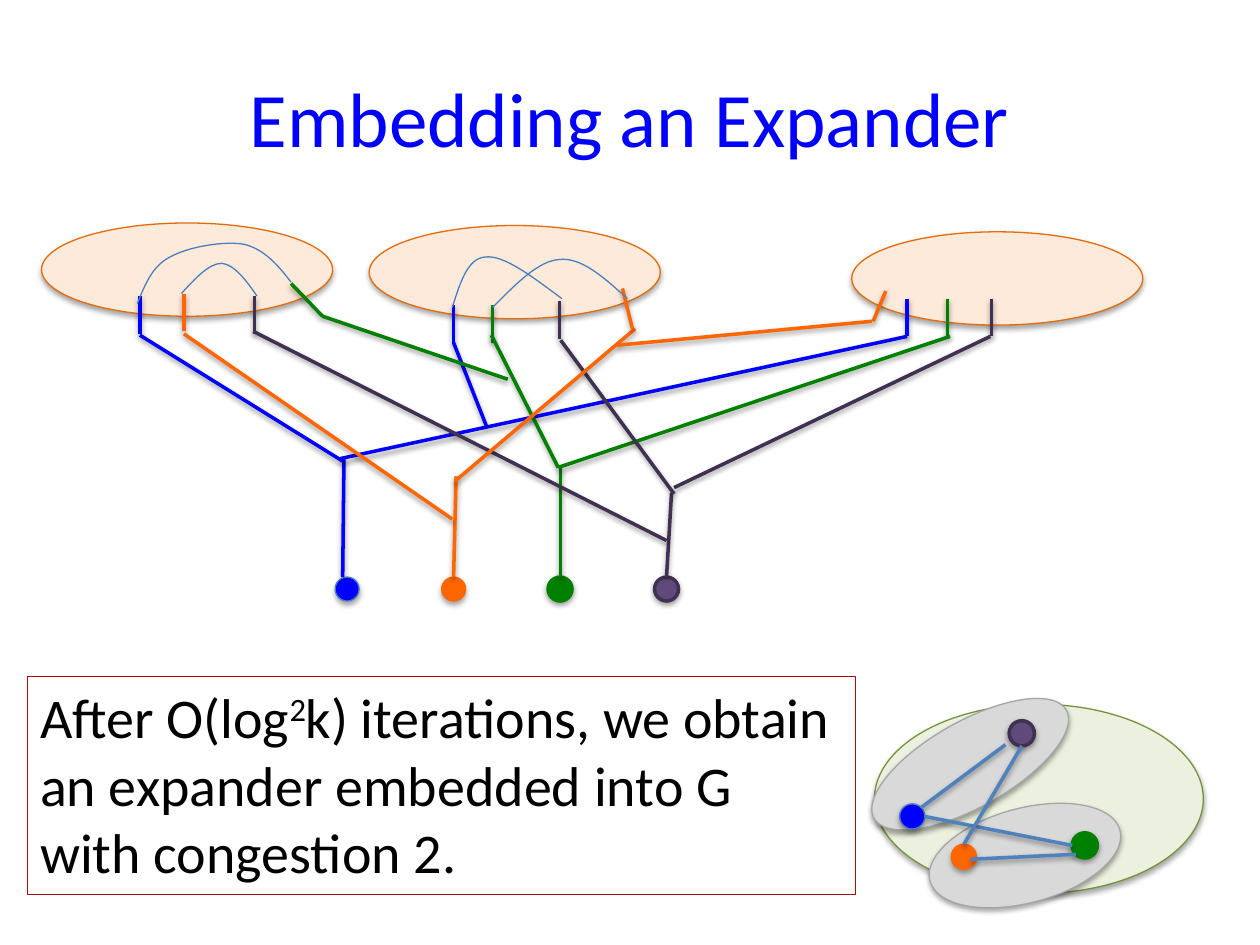
from lxml.etree import SubElement
from pptx import Presentation
from pptx.dml.color import RGBColor
from pptx.enum.shapes import MSO_CONNECTOR as Connector, MSO_SHAPE as Shape
from pptx.enum.text import MSO_ANCHOR as Anchor, PP_ALIGN as Align
from pptx.oxml.ns import qn
from pptx.util import Inches, Pt

BLACK = RGBColor(0x00, 0x00, 0x00)
BLUE = RGBColor(0x00, 0x00, 0xFF)
GREEN = RGBColor(0x00, 0x80, 0x00)
ORANGE = RGBColor(0xFF, 0x66, 0x00)
PURPLE = RGBColor(0x60, 0x4A, 0x7B)
DARK_PURPLE = RGBColor(0x40, 0x31, 0x52)
PEACH = RGBColor(0xFD, 0xEA, 0xDA)
RUST = RGBColor(0xE4, 0x6C, 0x0A)
PALE_GREEN = RGBColor(0xEB, 0xF1, 0xDE)
OLIVE = RGBColor(0x77, 0x93, 0x3C)
LIGHT_GRAY = RGBColor(0xD9, 0xD9, 0xD9)
GRAY = RGBColor(0xA6, 0xA6, 0xA6)
CURVE_BLUE = RGBColor(0x4B, 0x7E, 0xBC)
EDGE_BLUE = RGBColor(0x4F, 0x81, 0xBD)
RED = RGBColor(0xA9, 0x0B, 0x0F)

THIN, THICK = 0.75, 2
# Fill, outline and outline width of each terminal
NODES = {
    "blue": (BLUE, CURVE_BLUE, THIN),
    "orange": (ORANGE, ORANGE, THIN),
    "green": (GREEN, GREEN, THICK),
    "purple": (PURPLE, DARK_PURPLE, THICK),
}


class SlideArtist:
    font = "Calibri"

    def __init__(self, slide):
        self.slide = slide
        self.shapes = slide.shapes

    def shadow(self, shape, width):
        """Soft shadow below; thick outlines have a slightly closer one."""
        distance, alpha = (1.8, 35000) if width == THIN else (1.6, 38000)
        properties = shape._element.spPr
        effects = properties.find(qn("a:effectLst"))
        if effects is None:
            effects = SubElement(properties, qn("a:effectLst"))
        outer = SubElement(effects, qn("a:outerShdw"), blurRad=str(Pt(3.1)),
                           dist=str(Pt(distance)), dir="5400000", rotWithShape="0")
        color = SubElement(outer, qn("a:srgbClr"), val="000000")
        SubElement(color, qn("a:alpha"), val=str(alpha))

    def outline(self, shape, color, width):
        shape.line.color.rgb = color
        shape.line.width = Pt(width)

    def ellipse(self, x, y, w, h, fill, color, width=THIN, rotation=0):
        oval = self.shapes.add_shape(
            Shape.OVAL, Inches(x), Inches(y), Inches(w), Inches(h))
        oval.rotation = rotation
        oval.fill.solid()
        oval.fill.fore_color.rgb = fill
        self.outline(oval, color, width)
        oval.shadow.inherit = False
        self.shadow(oval, width)

    def node(self, name, x, y, size):
        self.ellipse(x, y, size, size, *NODES[name])

    def edge(self, x1, y1, x2, y2, color):
        line = self.shapes.add_connector(
            Connector.STRAIGHT, Inches(x1), Inches(y1), Inches(x2), Inches(y2))
        self.outline(line, color, THICK)
        self.shadow(line, THICK)

    def curve(self, *points):
        """Start point, then two control points and an end for each piece."""
        start, *others = [(Inches(x), Inches(y)) for x, y in points]
        builder = self.shapes.build_freeform(*start)
        builder.add_line_segments(others, close=False)
        arc = builder.convert_to_shape()
        # Join each three straight segments into one cubic segment
        segments = list(arc._element.iter(qn("a:lnTo")))
        for first, second, third in zip(*[iter(segments)] * 3):
            first.tag = qn("a:cubicBezTo")
            for segment in (second, third):
                first.append(segment[0])
                segment.getparent().remove(segment)
        arc.fill.background()
        self.outline(arc, CURVE_BLUE, THIN)
        arc.shadow.inherit = False

    def style(self, para, size, color):
        for span in para.runs:
            span.font.name = self.font
            span.font.size = Pt(size)
            span.font.color.rgb = color

    def title(self, text, x, y, w, h):
        box = self.shapes.add_textbox(Inches(x), Inches(y), Inches(w), Inches(h))
        frame = box.text_frame
        frame.word_wrap = True
        frame.vertical_anchor = Anchor.MIDDLE
        frame.text = text
        para = frame.paragraphs[0]
        para.alignment = Align.CENTER
        self.style(para, 44, BLUE)

    def statement(self, before, exponent, after, x, y, w, h):
        box = self.shapes.add_textbox(Inches(x), Inches(y), Inches(w), Inches(h))
        self.outline(box, RED, THIN)
        frame = box.text_frame
        frame.word_wrap = True
        frame.margin_right = Inches(0.15)
        para = frame.paragraphs[0]
        for text in (before, exponent, after):
            para.add_run().text = text
        self.style(para, 32, BLACK)
        para.runs[1].font._element.set("baseline", "30000")


def main():
    deck = Presentation()
    deck.slide_width, deck.slide_height = Inches(10), Inches(7.5)
    page = SlideArtist(deck.slides.add_slide(deck.slide_layouts[6]))

    # Clusters
    for x, y in ((0.33, 1.77), (2.93, 1.79), (6.76, 1.84)):
        page.ellipse(x, y, 2.31, 0.74, PEACH, RUST)

    # Terminals
    for index, name in enumerate(NODES):
        page.node(name, 2.66 + 0.845 * index, 4.58, 0.19)

    # Trees from the terminals into the clusters
    trees = {
        BLUE: [
            (2.72, 4.58, 2.73, 3.64), (2.72, 3.66, 1.11, 2.66),
            (2.7, 3.64, 7.2, 2.67), (3.86, 3.38, 3.6, 2.72)],
        GREEN: [
            (2.31, 2.25, 2.56, 2.51), (4.45, 4.58, 4.45, 3.71),
            (4.03, 3.01, 2.56, 2.51), (4.43, 3.71, 3.9, 2.66),
            (4.43, 3.71, 7.54, 2.67)],
        DARK_PURPLE: [
            (5.29, 4.58, 5.33, 3.91), (5.35, 3.87, 7.86, 2.67),
            (5.35, 3.92, 4.45, 2.7), (5.29, 4.29, 2.01, 2.63)],
        ORANGE: [
            (3.6, 4.58, 3.62, 3.78), (3.59, 4.12, 1.46, 2.65),
            (3.61, 3.82, 5.04, 2.61), (4.94, 2.29, 5.02, 2.61),
            (7.03, 2.31, 6.93, 2.55), (4.9, 2.74, 6.92, 2.55)],
    }
    # Upright ends inside the clusters, all of one length
    stubs = {
        BLUE: [(1.11, 2.35), (3.6, 2.42), (7.2, 2.37)],
        GREEN: [(3.91, 2.42), (7.52, 2.37)],
        DARK_PURPLE: [(2.02, 2.35), (4.44, 2.39), (7.87, 2.37)],
        ORANGE: [(1.46, 2.33)],
    }
    for color, edges in trees.items():
        for x, y in stubs[color]:
            page.edge(x, y, x, y + 0.3, color)
        for ends in edges:
            page.edge(*ends, color)

    # Small graph G with its two parts
    page.ellipse(6.94, 5.59, 2.61, 1.5, PALE_GREEN, OLIVE)
    page.ellipse(7.76, 6.01, 0.75, 1.56, LIGHT_GRAY, GRAY, rotation=255)
    page.ellipse(7.36, 5.19, 0.68, 1.75, LIGHT_GRAY, GRAY, rotation=60.6)
    for name, x, y in (("green", 8.51, 6.61), ("orange", 7.55, 6.7),
                       ("purple", 8.01, 5.72), ("blue", 7.14, 6.38)):
        page.node(name, x, y, 0.2)
    for ends in ((7.34, 6.48, 8.51, 6.71), (7.65, 6.7, 8.11, 5.92),
                 (7.31, 6.41, 7.98, 5.91), (7.7, 6.82, 8.54, 6.78)):
        page.edge(*ends, EDGE_BLUE)

    # Matchings inside the clusters
    page.curve((1.09, 2.41), (1.15, 2.26), (1.21, 2.11), (1.35, 2.04),
               (1.49, 1.96), (1.78, 1.91), (1.94, 1.94),
               (2.1, 1.98), (2.21, 2.11), (2.31, 2.24))
    page.curve((1.44, 2.33), (1.55, 2.21), (1.66, 2.09), (1.76, 2.09),
               (1.86, 2.1), (1.95, 2.22), (2.04, 2.35))
    page.curve((3.59, 2.44), (3.65, 2.25), (3.71, 2.05), (3.85, 2.04),
               (4, 2.02), (4.23, 2.2), (4.46, 2.37))
    page.curve((3.91, 2.44), (4.09, 2.26), (4.27, 2.07), (4.44, 2.06),
               (4.62, 2.04), (4.8, 2.21), (4.98, 2.37))

    # Title and statement
    page.title("Embedding an Expander", 0.5, 0.3, 9, 1.25)
    page.statement(
        "After O(log", "2",
        "k) iterations, we obtain an expander embedded into G with congestion 2.",
        0.22, 5.37, 6.57, 1.73)

    deck.save("out.pptx")


if __name__ == "__main__":
    main()
